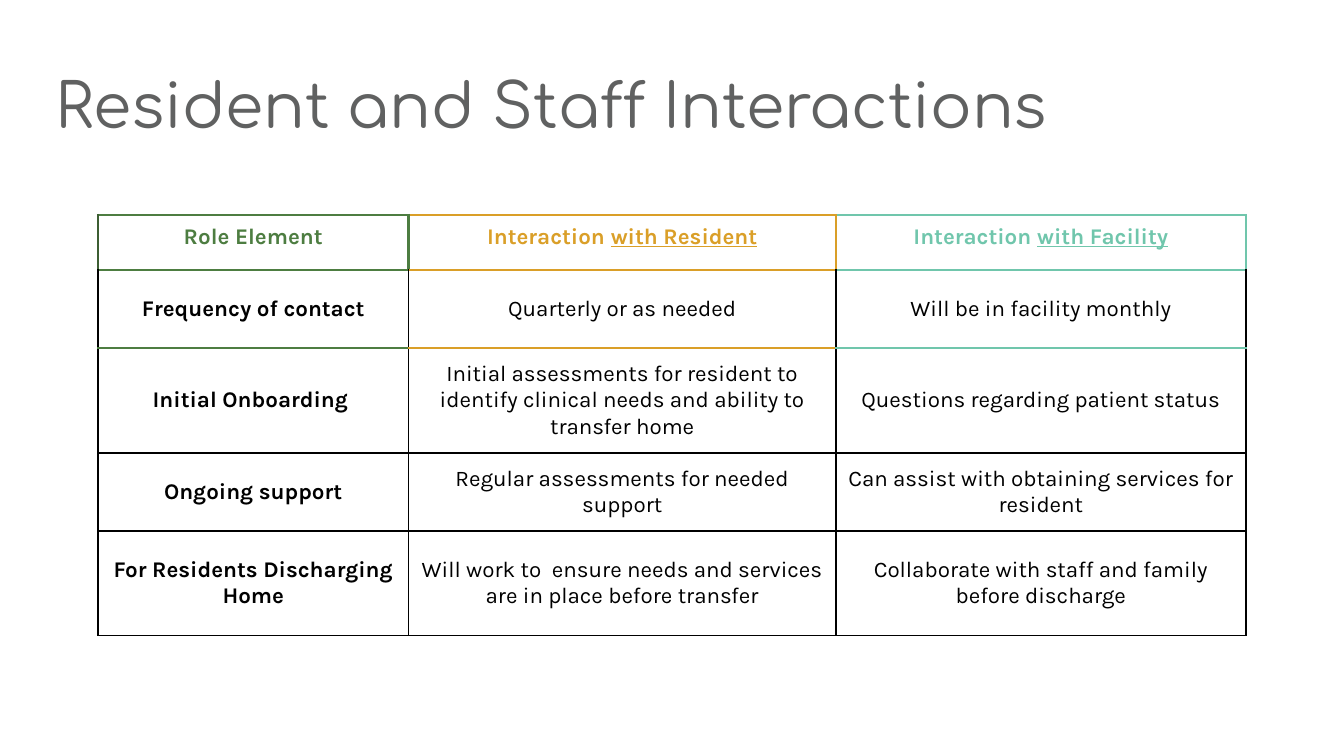
from lxml.etree import SubElement
from pptx import Presentation
from pptx.dml.color import RGBColor as RGB
from pptx.enum.text import MSO_ANCHOR as Anchor, PP_ALIGN as Align
from pptx.oxml.ns import qn
from pptx.util import Inches, Pt

# Widescreen slide, 16:9
WIDTH = 10
HEIGHT = WIDTH * 9 / 16
COLORS = {
    "title": "606161",
    "green": "4D7D41",
    "dark_green": "3C5E33",
    "gold": "DA9F28",
    "mint": "70C6AC",
    "black": "000000",
}

# Table grid: left and top, then column widths and row heights
TABLE_LEFT, TABLE_TOP = 0.73, 1.6
COLS = [2.31, 3.18, 3.05]
ROWS = [0.41, 0.58, 0.78, 0.58, 0.78]
ACCENTS = ["green", "gold", "mint"]

# Each header is a plain part and an underlined part
HEADERS = [
    ("Role Element", ""),
    ("Interaction ", "with Resident"),
    ("Interaction ", "with Facility"),
]
BODY = [
    ("Frequency of contact", "Quarterly or as needed",
     "Will be in facility monthly"),
    ("Initial Onboarding ",
     "Initial assessments for resident to identify clinical needs "
     "and ability to transfer home",
     "Questions regarding patient status"),
    ("Ongoing support", "Regular assessments for needed support",
     "Can assist with obtaining services for resident"),
    ("For Residents Discharging Home",
     "Will work to  ensure needs and services are in place before transfer",
     "Collaborate with staff and family before discharge"),
]


def add_text(p, text, font="Karla", size=12, color="black", bold=False,
             underline=False, align=Align.CENTER):
    """Append one formatted run to a paragraph."""
    p.alignment = align
    r = p.add_run()
    r.text = text
    r.font.name, r.font.size = font, Pt(size)
    r.font.bold, r.font.underline = bold, underline
    r.font.color.rgb = RGB.from_string(COLORS[color])


def set_borders(cell, borders):
    """Draw the cell's edges; borders maps L, R, T, B to (color, points)."""
    tc_pr = cell._tc.get_or_add_tcPr()
    for i, side in enumerate("LRTB"):
        color, width = borders[side]
        ln = SubElement(tc_pr, qn(f"a:ln{side}"), w=str(Pt(width)))
        fill = SubElement(ln, qn("a:solidFill"))
        SubElement(fill, qn("a:srgbClr"), val=COLORS[color])
        tc_pr.insert(i, ln)


def cell_borders(row, col):
    """Accent lines frame the header and close the first body row."""
    thin = ("black", 1)
    accent = (ACCENTS[col], 1.5)
    if row == 0:
        left = ACCENTS[col - 1] if col else "dark_green"
        return {"L": (left, 1.5), "R": accent, "T": accent, "B": accent}
    return {"L": thin, "R": thin,
            "T": accent if row <= 2 else thin,
            "B": accent if row == 1 else thin}


def add_title(s, text):
    box = s.shapes.add_textbox(Inches(0.34), Inches(0.49),
                               Inches(WIDTH - 2 * 0.34), Inches(0.63))
    tf = box.text_frame
    tf.word_wrap = True
    tf.vertical_anchor = Anchor.MIDDLE
    tf.margin_left = tf.margin_right = Inches(0.07)
    tf.margin_top = tf.margin_bottom = Inches(0.04)
    p = tf.paragraphs[0]
    p.line_spacing = 0.9
    add_text(p, text, font="Comfortaa", size=33, color="title",
             align=Align.LEFT)


def add_interaction_table(s):
    frame = s.shapes.add_table(
        len(ROWS), len(COLS), Inches(TABLE_LEFT), Inches(TABLE_TOP),
        Inches(sum(COLS)), Inches(sum(ROWS)))
    table = frame.table
    table.first_row = table.horz_banding = False
    for column, width in zip(table.columns, COLS):
        column.width = Inches(width)
    for row, height in zip(table.rows, ROWS):
        row.height = Inches(height)

    for row in range(len(ROWS)):
        for col in range(len(COLS)):
            cell = table.cell(row, col)
            cell.fill.background()
            cell.margin_left = cell.margin_right = Inches(0.07)
            cell.margin_top = cell.margin_bottom = Inches(0.07)
            cell.vertical_anchor = Anchor.MIDDLE if row else Anchor.TOP
            set_borders(cell, cell_borders(row, col))
            p = cell.text_frame.paragraphs[0]
            if row:
                add_text(p, BODY[row - 1][col], bold=col == 0)
                continue
            plain, underlined = HEADERS[col]
            add_text(p, plain, color=ACCENTS[col], bold=True)
            if underlined:
                add_text(p, underlined, color=ACCENTS[col], bold=True,
                         underline=True)


def main():
    prs = Presentation()
    prs.slide_width, prs.slide_height = Inches(WIDTH), Inches(HEIGHT)
    s = prs.slides.add_slide(prs.slide_layouts[6])
    add_title(s, "Resident and Staff Interactions")
    add_interaction_table(s)
    prs.save("out.pptx")


if __name__ == "__main__":
    main()
